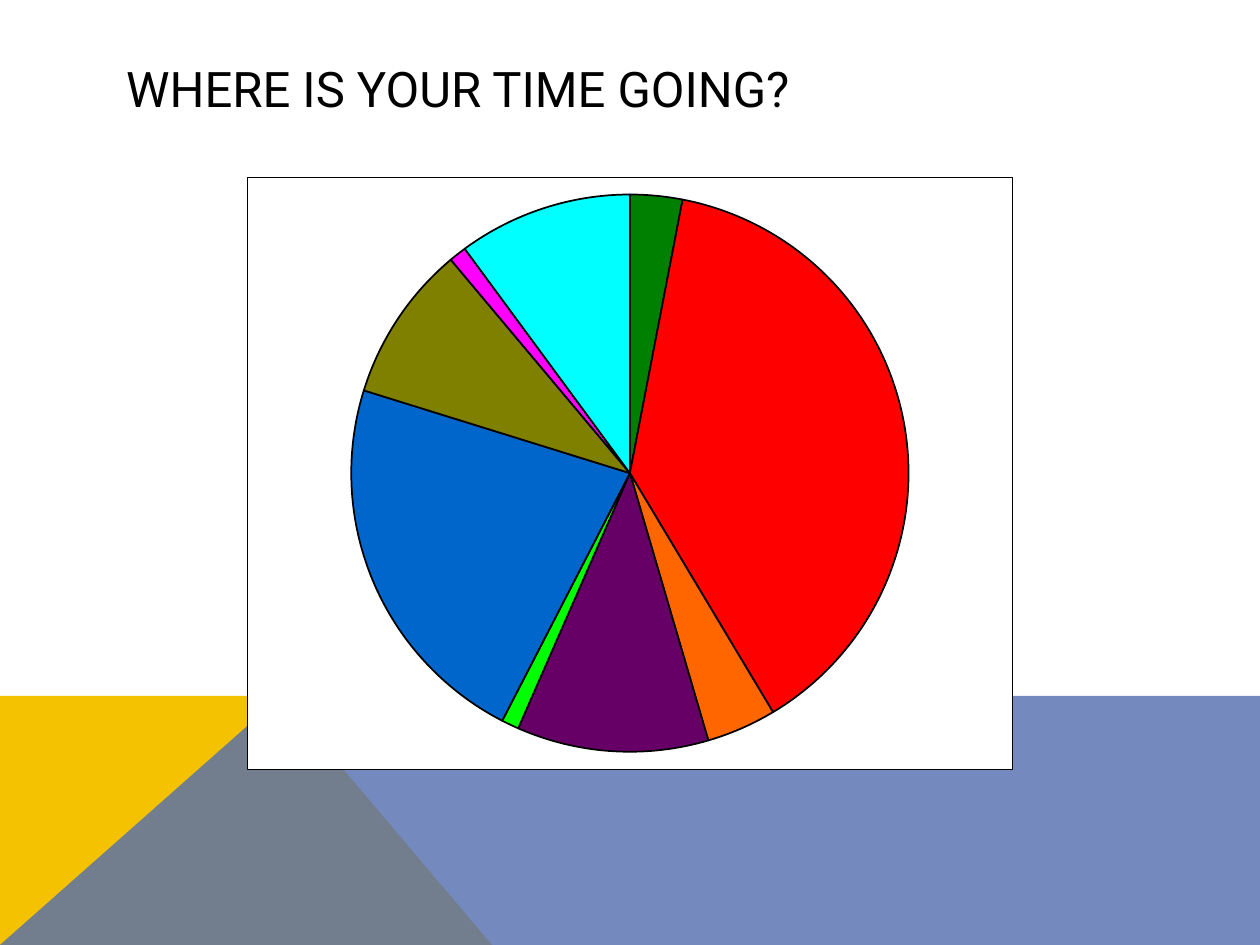
from lxml import etree
from pptx import Presentation
from pptx.chart.data import CategoryChartData
from pptx.dml.color import RGBColor
from pptx.enum.chart import XL_CHART_TYPE
from pptx.enum.text import MSO_ANCHOR, PP_ALIGN
from pptx.oxml import parse_xml
from pptx.oxml.ns import nsdecls, qn
from pptx.util import Cm, Pt

PIE = XL_CHART_TYPE.PIE
LEFT = PP_ALIGN.LEFT
MIDDLE = MSO_ANCHOR.MIDDLE
TITLE_ONLY = 5

WIDTH, HEIGHT = 25.4, 19.05
BAND_TOP, PEAK_X, FOOT_X = 14.03, 5.67, 9.92

# Share of time and colour of each slice
SLICES = [
    (3, "008000"), (38, "FF0000"), (0, "FFFF00"), (4, "FF6600"), (11, "660066"),
    (1, "00FF00"), (22, "0066CC"), (9, "808000"), (1, "FF00FF"), (10, "00FFFF"),
]


def color(value):
    return RGBColor.from_string(value)


def write_text(text_frame, text, *, font, size, fill, align=LEFT, anchor=MIDDLE):
    text_frame.word_wrap = True
    text_frame.vertical_anchor = anchor
    paragraph = text_frame.paragraphs[0]
    paragraph.alignment = align
    run = paragraph.add_run()
    run.text = text
    run.font.name = font
    run.font.size = Pt(size)
    run.font.color.rgb = color(fill)


class SlideBuilder:
    title_font = "Roboto"
    chart_font = "Arial"
    ink = "000000"
    paper = "FFFFFF"

    def __init__(self, presentation):
        layout = presentation.slide_layouts[TITLE_ONLY]
        self.slide = presentation.slides.add_slide(layout)
        background = self.slide.background.fill
        background.solid()
        background.fore_color.rgb = color(self.paper)

    def polygon(self, points, fill, opacity=100):
        corners = [(Cm(x), Cm(y)) for x, y in points]
        builder = self.slide.shapes.build_freeform(*corners[0])
        builder.add_line_segments(corners[1:], close=True)
        shape = builder.convert_to_shape()
        shape.shadow.inherit = False
        shape.line.fill.background()
        shape.fill.solid()
        shape.fill.fore_color.rgb = color(fill)
        if opacity < 100:
            solid = shape.element.spPr.find(qn("a:solidFill"))
            alpha = etree.SubElement(solid[0], qn("a:alpha"))
            alpha.set("val", str(opacity * 1000))

    def title(self, text, left, top, width, height):
        shape = self.slide.shapes.title
        shape.left, shape.top = Cm(left), Cm(top)
        shape.width, shape.height = Cm(width), Cm(height)
        write_text(shape.text_frame, text, font=self.title_font, size=28, fill=self.ink)
        # Bring the title in front of the background shapes
        shape.element.getparent().append(shape.element)

    def pie(self, slices, left, top, width, height):
        data = CategoryChartData()
        data.categories = [str(number) for number in range(1, len(slices) + 1)]
        data.add_series("Series 1", [share for share, _ in slices])
        chart = self.slide.shapes.add_chart(
            PIE, Cm(left), Cm(top), Cm(width), Cm(height), data).chart
        chart.has_title = False
        chart.has_legend = False
        chart.font.name = self.chart_font
        chart.font.size = Pt(12)
        chart.font.color.rgb = color(self.ink)
        plot = chart.plots[0]
        plot.vary_by_categories = True
        for index, (_, fill) in enumerate(slices):
            style = plot.series[0].points[index].format
            style.fill.solid()
            style.fill.fore_color.rgb = color(fill)
            style.line.color.rgb = color(self.ink)
            style.line.width = Pt(1)
        self.frame_chart(chart)

    def frame_chart(self, chart):
        # White panel with a hairline border and square corners
        body = chart.element.find(qn("c:chart"))
        body.addprevious(parse_xml(f'<c:roundedCorners {nsdecls("c")} val="0"/>'))
        body.addnext(parse_xml(
            f'<c:spPr {nsdecls("c", "a")}>'
            f'<a:solidFill><a:srgbClr val="{self.paper}"/></a:solidFill>'
            f'<a:ln w="{Pt(0.25)}"><a:solidFill><a:srgbClr val="{self.ink}"/>'
            '</a:solidFill></a:ln></c:spPr>'))
        # Pie centred in the panel
        plot_area = body.find(qn("c:plotArea"))
        for old_layout in plot_area.findall(qn("c:layout")):
            plot_area.remove(old_layout)
        share_x, share_y = 0.73, 0.94
        plot_area.insert(0, parse_xml(
            f'<c:layout {nsdecls("c")}><c:manualLayout><c:layoutTarget val="inner"/>'
            '<c:xMode val="edge"/><c:yMode val="edge"/>'
            f'<c:x val="{(1 - share_x) / 2:.3f}"/><c:y val="{(1 - share_y) / 2:.3f}"/>'
            f'<c:w val="{share_x}"/><c:h val="{share_y}"/>'
            '</c:manualLayout></c:layout>'))


def main():
    presentation = Presentation()
    presentation.slide_width, presentation.slide_height = Cm(WIDTH), Cm(HEIGHT)
    builder = SlideBuilder(presentation)

    # Background bands
    builder.polygon([(0, HEIGHT), (0, BAND_TOP), (PEAK_X, BAND_TOP), (FOOT_X, HEIGHT)],
                    "F5C201")
    builder.polygon([(0, HEIGHT), (PEAK_X, BAND_TOP), (WIDTH, BAND_TOP), (WIDTH, HEIGHT)],
                    "526DB0", opacity=80)

    # Title and chart
    builder.title("WHERE IS YOUR TIME GOING?", 2.29, 1.02, 20.88, 1.52)
    builder.pie(SLICES, 4.98, 3.56, 15.44, 11.96)

    presentation.save("out.pptx")


if __name__ == "__main__":
    main()
